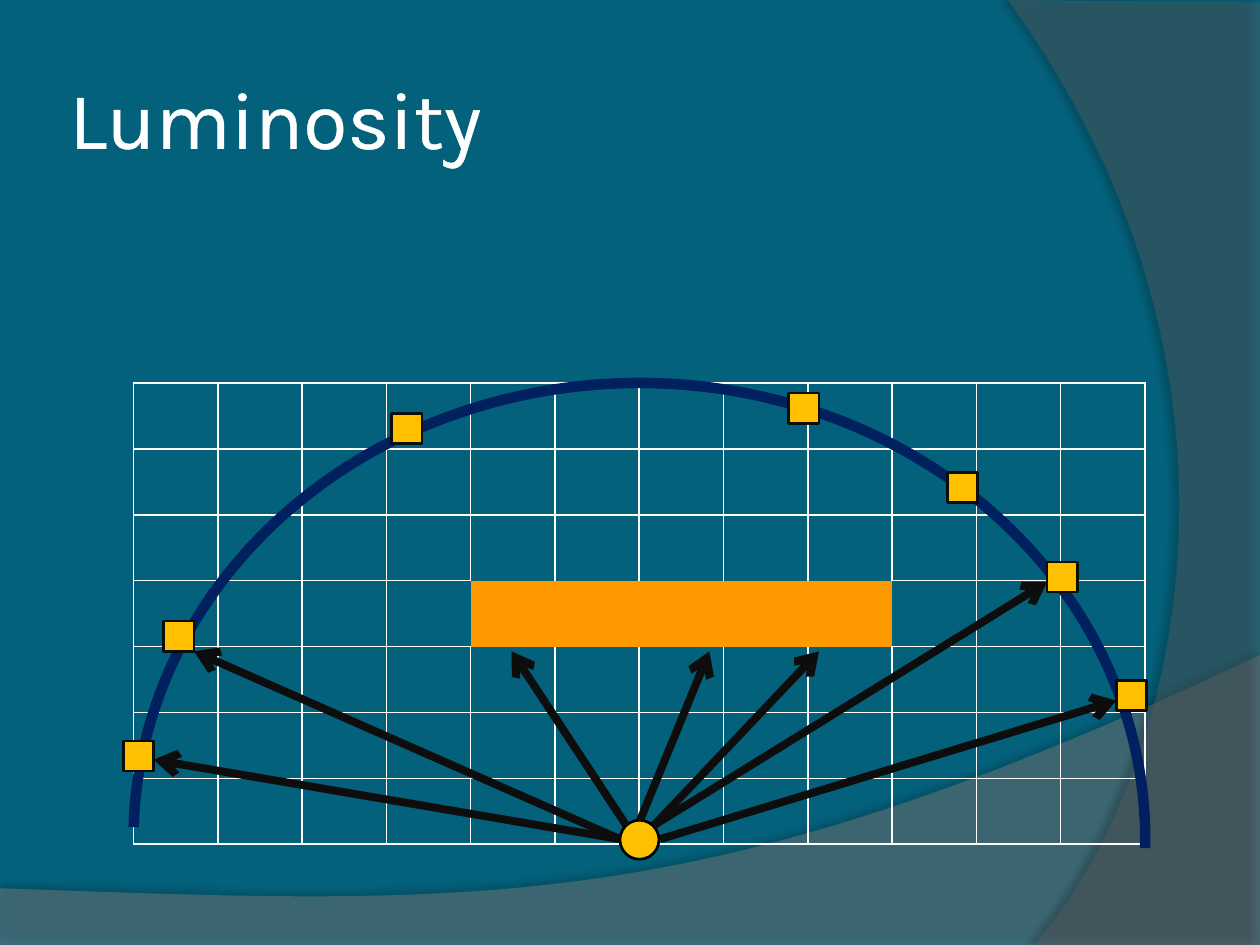
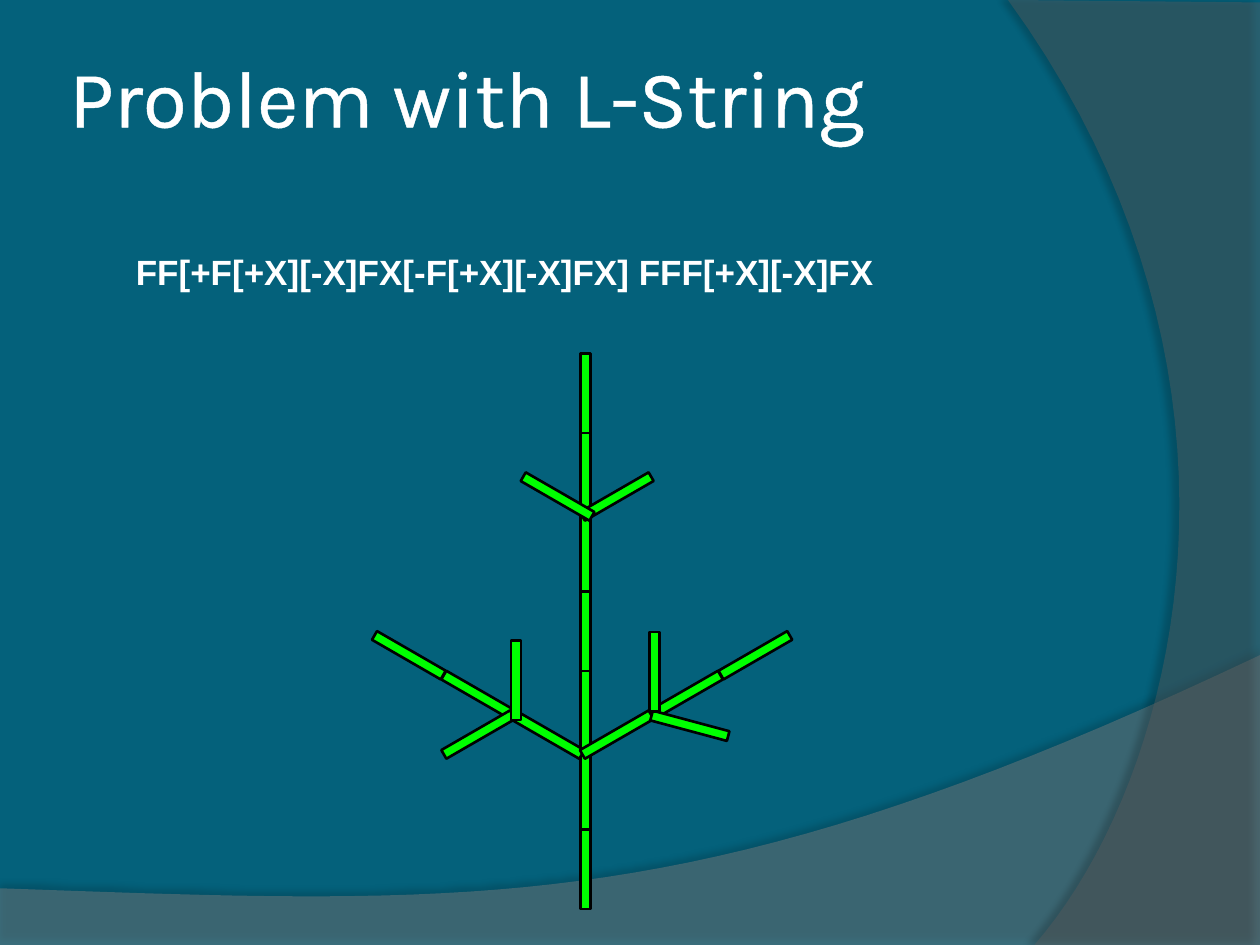
from lxml import etree
from pptx import Presentation
from pptx import util as u
from pptx.dml.color import RGBColor
from pptx.enum import shapes, text
from pptx.oxml import ns

SEA = RGBColor(0x04, 0x61, 0x7B)
WHITE = RGBColor(0xFF, 0xFF, 0xFF)
BLACK = RGBColor(0x00, 0x00, 0x00)
INK = RGBColor(0x0D, 0x0D, 0x0D)
LOWER_GREY = RGBColor(0x7F, 0x7F, 0x7F)
RIGHT_GREY = RGBColor(0x5E, 0x5E, 0x5E)
NAVY = RGBColor(0x00, 0x20, 0x60)
GOLD = RGBColor(0xFF, 0xC0, 0x00)
ORANGE = RGBColor(0xFF, 0x99, 0x00)
LEAF = RGBColor(0x00, 0xFF, 0x00)

TITLE_FONT = "Karla"
BODY_FONT = "Arial"
SHAPE = shapes.MSO_SHAPE


def child(parent, tag, **attributes):
    return etree.SubElement(parent, ns.qn(tag), attributes)


def solid(parent, color):
    return child(child(parent, "a:solidFill"), "a:srgbClr", val=str(color))


def curve(start, first, second, end, steps=40):
    points = []
    for step in range(steps + 1):
        t = step / steps
        weights = ((1 - t) ** 3, 3 * t * (1 - t) ** 2, 3 * t * t * (1 - t), t ** 3)
        points.append(tuple(
            sum(w * p[axis] for w, p in zip(weights, (start, first, second, end)))
            for axis in (0, 1)))
    return points


class Deck:
    def __init__(self):
        self.presentation = Presentation()
        self.presentation.slide_width = u.Inches(10)
        self.presentation.slide_height = u.Inches(7.5)
        self.slide = None

    def new_slide(self):
        self.slide = self.presentation.slides.add_slide(self.presentation.slide_layouts[6])
        background = self.slide.background.fill
        background.solid()
        background.fore_color.rgb = SEA
        lower_edge = curve((10, 5.2), (5.59, 7.29), (3.91, 7.19), (0, 7.05))
        right_edge = curve((8.21, 7.5), (9.35, 6.19), (10.18, 3), (8, 0))
        self.band([(0, 7.5), (10, 7.5)] + lower_edge, LOWER_GREY, 45, 35, 3.5, 270)
        self.band([(10, 0.02), (10, 7.5)] + right_edge, RIGHT_GREY, 40, 45, 4, 180)

    def band(self, outline, color, opacity, shade, distance, angle):
        points = [(u.Inches(x), u.Inches(y)) for x, y in outline]
        builder = self.slide.shapes.build_freeform(*points[0])
        builder.add_line_segments(points[1:], close=True)
        band = builder.convert_to_shape()
        self.paint(band, color)
        properties = band._element.spPr
        tint = properties.find(ns.qn("a:solidFill")).find(ns.qn("a:srgbClr"))
        child(tint, "a:alpha", val=str(opacity * 1000))
        shadow = child(properties.find(ns.qn("a:effectLst")), "a:outerShdw",
                       blurRad=str(u.Pt(4)), dist=str(u.Pt(distance)),
                       dir=str(angle * 60000), algn="ctr", rotWithShape="0")
        shadow_color = child(shadow, "a:srgbClr", val=str(BLACK))
        child(shadow_color, "a:alpha", val=str(shade * 1000))

    def paint(self, shape, fill=None, line=None, width=1.5):
        shape.shadow.inherit = False
        for part, color in ((shape.fill, fill), (shape.line.fill, line)):
            if color is None:
                part.background()
            else:
                part.solid()
                part.fore_color.rgb = color
        if line is not None:
            shape.line.width = u.Pt(width)

    def shape(self, kind, left, top, width, height, fill=None, line=BLACK, weight=1.5, turn=0):
        shape = self.slide.shapes.add_shape(
            kind, u.Inches(left), u.Inches(top), u.Inches(width), u.Inches(height))
        self.paint(shape, fill, line, weight)
        shape.rotation = turn
        return shape

    def label(self, words, left, top, width, height, font, size, bold=None):
        box = self.slide.shapes.add_textbox(
            u.Inches(left), u.Inches(top), u.Inches(width), u.Inches(height))
        frame = box.text_frame
        frame.word_wrap = True
        paragraph = frame.paragraphs[0]
        paragraph.text = words
        paragraph.font.name = font
        paragraph.font.size = u.Pt(size)
        paragraph.font.bold = bold
        paragraph.font.color.rgb = WHITE
        return frame

    def title(self, words, top):
        frame = self.label(words, 0.5, top, 8.17, 1.25, TITLE_FONT, 46)
        frame.vertical_anchor = text.MSO_ANCHOR.MIDDLE
        frame.margin_left = frame.margin_right = u.Inches(0.05)
        frame.margin_top = frame.margin_bottom = u.Inches(0.05)
        defaults = frame.paragraphs[0]._p.pPr.find(ns.qn("a:defRPr"))
        outline = child(defaults, "a:ln", w=str(u.Pt(1.45)))
        solid(outline, WHITE)
        defaults.insert(0, outline)

    def arrow(self, start, end):
        ends = [u.Inches(value) for value in start + end]
        arrow = self.slide.shapes.add_connector(shapes.MSO_CONNECTOR.STRAIGHT, *ends)
        arrow.line.color.rgb = INK
        arrow.line.width = u.Pt(4.5)
        properties = arrow._element.spPr
        child(properties.find(ns.qn("a:ln")), "a:tailEnd", type="arrow")
        child(properties, "a:effectLst")

    def grid(self, rows, columns, left, top, width, height, filled):
        table = self.slide.shapes.add_table(
            rows, columns, u.Inches(left), u.Inches(top),
            u.Inches(width), u.Inches(height)).table
        table.first_row = table.horz_banding = False
        sides = (("a:lnL", 0, -1), ("a:lnR", 0, 1), ("a:lnT", -1, 0), ("a:lnB", 1, 0))
        for row in range(rows):
            for column in range(columns):
                cell = table.cell(row, column)
                properties = cell._tc.get_or_add_tcPr()
                for tag, down, across in sides:
                    border = child(properties, tag, w=str(u.Pt(1)))
                    if filled & {(row, column), (row + down, column + across)}:
                        child(border, "a:noFill")
                    else:
                        solid(border, WHITE)
                if (row, column) in filled:
                    cell.fill.solid()
                    cell.fill.fore_color.rgb = ORANGE
                else:
                    cell.fill.background()


def luminosity(deck):
    deck.new_slide()
    obstacle = {(3, column) for column in range(4, 9)}
    deck.grid(7, 12, 1.06, 3.04, 8.03, 3.66, obstacle)
    deck.title("Luminosity", 0.3)
    deck.shape(SHAPE.OVAL, 4.92, 6.51, 0.31, 0.31, GOLD)
    sky = deck.shape(SHAPE.ARC, 1.06, 3.04, 8.03, 7.24, line=NAVY, weight=6)
    for index, degrees in enumerate((181.36, 1.02)):
        sky.adjustments[index] = degrees * 0.6
    rays = [
        ((4.92, 6.66), (1.54, 5.17)),
        ((4.97, 6.55), (4.06, 5.17)),
        ((5.08, 6.51), (5.63, 5.17)),
        ((5.19, 6.55), (8.31, 4.62)),
        ((4.92, 6.66), (1.22, 6.03)),
        ((5.24, 6.66), (8.86, 5.56)),
        ((5.19, 6.55), (6.5, 5.17)),
    ]
    for source, target in rays:
        deck.arrow(source, target)
    samples = [(0.98, 5.88), (1.3, 4.93), (3.11, 3.28), (6.26, 3.12),
               (7.52, 3.75), (8.31, 4.46), (8.86, 5.4)]
    for left, top in samples:
        deck.shape(SHAPE.RECTANGLE, left, top, 0.24, 0.24, GOLD, INK)


def l_string(deck):
    deck.new_slide()
    deck.label("FF[+F[+X][-X]FX[-F[+X][-X]FX] FFF[+X][-X]FX",
               0.98, 1.94, 7.09, 0.44, BODY_FONT, 20, True)
    deck.title("Problem with L-String", 0.13)
    length = 0.63
    rise = length / 2
    reach = 0.55
    trunk = [(4.33, 6.86 - length * i, 270) for i in range(7)]
    left_arm = [(4.03 - reach * i, 5.79 - rise * i, 210) for i in range(3)]
    left_twigs = [(3.48, 5.79, 150), (3.78, 5.36, 270)]
    right_arm = [(4.58 + reach * i, 5.79 - rise * i, 330) for i in range(3)]
    right_twigs = [(5.16, 5.72, 195), (4.88, 5.29, 270)]
    top_twigs = [(4.58, 3.9, 330), (4.11, 3.9, 210)]
    plant = trunk + left_arm + left_twigs + right_arm + right_twigs + top_twigs
    for left, top, turn in plant:
        deck.shape(SHAPE.RECTANGLE, left, top, length, 0.08, LEAF, turn=turn)


def main():
    deck = Deck()
    luminosity(deck)
    l_string(deck)
    deck.presentation.save("out.pptx")


if __name__ == "__main__":
    main()
